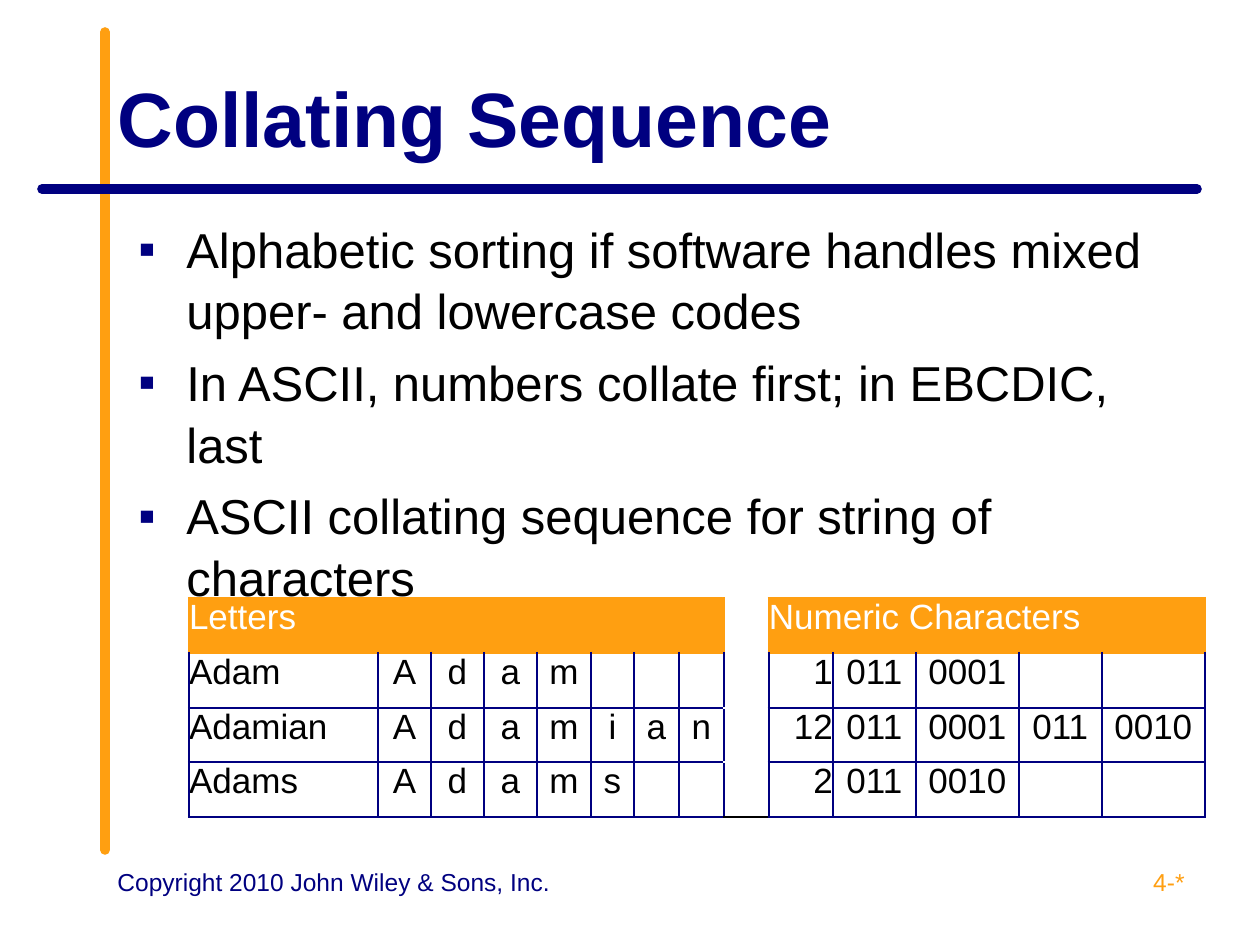
"""Build the Collating Sequence slide."""
from lxml import etree
from pptx import Presentation, util as u
from pptx.dml.color import RGBColor
from pptx.enum import shapes, text
from pptx.oxml import ns

SCALE = 914400 / 126
FONT = "Arial"
NAVY, ORANGE, WHITE, BLACK = "000080", "FF9F11", "FFFFFF", "000000"
LEFT, CENTER, RIGHT = text.PP_ALIGN.LEFT, text.PP_ALIGN.CENTER, text.PP_ALIGN.RIGHT

RULES = [((105, 850), (105, 32), ORANGE), ((1197, 189), (42, 189), NAVY)]
TITLE = "Collating Sequence"
BULLETS = [
    "Alphabetic sorting if software handles mixed upper- and lowercase codes",
    "In ASCII, numbers collate first; in EBCDIC, last",
    "ASCII collating sequence for string of characters",
]
FOOTERS = [
    ("4-*", (903, 861, 294, 65), ORANGE, RIGHT),
    ("Copyright 2010 John Wiley & Sons, Inc.", (105, 861, 462, 65), NAVY, LEFT),
]
HEADINGS = {0: ("Letters", 7), 9: ("Numeric Characters", 13)}
GAP, NUMBER = 8, 9
ROWS = [
    ("Adam", ["1", "011", "0001"]),
    ("Adamian", ["12", "011", "0001", "011", "0010"]),
    ("Adams", ["2", "011", "0010"]),
]
COLUMN_WIDTHS = [189, 53, 53, 53, 54, 43, 45, 45, 45, 64, 83, 103, 83, 103]
ROW_HEIGHTS = [55, 55, 54, 55]


def px(value):
    return u.Emu(round(value * SCALE))


def color(value):
    return RGBColor.from_string(value)


def write(para, words, size, ink, align=LEFT, bold=False):
    para.alignment = align
    span = para.add_run()
    span.text = words
    font = span.font
    font.name, font.size, font.bold = FONT, u.Pt(size), bold
    font.color.rgb = color(ink)


def add_box(page, place):
    frame = page.shapes.add_textbox(*map(px, place)).text_frame
    frame.word_wrap = True
    return frame


def add_rule(page, start, end, ink):
    rule = page.shapes.add_connector(shapes.MSO_CONNECTOR.STRAIGHT, *map(px, start + end))
    rule.line.width = u.Pt(5.5)
    rule.line.color.rgb = color(ink)
    rule.line._get_or_add_ln().set("cap", "rnd")
    etree.SubElement(rule._element.spPr, ns.qn("a:effectLst"))


def add_bullet(para):
    props = para._p.get_or_add_pPr()
    props.set("marL", str(px(48)))
    props.set("indent", str(-px(48)))
    tint = etree.SubElement(props, ns.qn("a:buClr"))
    etree.SubElement(tint, ns.qn("a:srgbClr"), val=NAVY)
    etree.SubElement(props, ns.qn("a:buFont"), typeface=FONT)
    etree.SubElement(props, ns.qn("a:buChar"), char="▪")


def border(cell, **sides):
    """Draw the given L, R, T, B sides, each an (ink, points) pair."""
    props = cell._tc.get_or_add_tcPr()
    for side in "LRTB":
        if side in sides:
            ink, points = sides[side]
            line = etree.SubElement(props, ns.qn(f"a:ln{side}"), w=str(u.Pt(points)))
            fill = etree.SubElement(line, ns.qn("a:solidFill"))
            etree.SubElement(fill, ns.qn("a:srgbClr"), val=ink)


def cell_borders(row, column):
    edge = (ORANGE if row == 0 else NAVY, 1.5)
    sides = dict.fromkeys("LRTB", edge)
    if row == 1:
        sides["T"] = (ORANGE, 1.5)
    if column == GAP:
        sides = {"L": edge, "R": edge}
        if row == 0:
            sides.update(T=(WHITE, 1), B=(WHITE, 1))
        elif row == 1:
            sides["T"] = (WHITE, 1)
        elif row == len(ROWS):
            sides["B"] = (BLACK, 1)
    return sides


def add_table(page):
    size = sum(COLUMN_WIDTHS), sum(ROW_HEIGHTS)
    table = page.shapes.add_table(len(ROW_HEIGHTS), len(COLUMN_WIDTHS),
                                  *map(px, (189, 598) + size)).table
    table.first_row = table.horz_banding = False
    for column, width in zip(table.columns, COLUMN_WIDTHS):
        column.width = px(width)
    for row, height in zip(table.rows, ROW_HEIGHTS):
        row.height = px(height)
    for r, row in enumerate(table.rows):
        for c, cell in enumerate(row.cells):
            cell.margin_left = cell.margin_right = cell.margin_top = cell.margin_bottom = 0
            border(cell, **cell_borders(r, c))
            if r == 0 and c != GAP:
                cell.fill.solid()
                cell.fill.fore_color.rgb = color(ORANGE)
            else:
                cell.fill.background()
    for first, (heading, last) in HEADINGS.items():
        table.cell(0, first).merge(table.cell(0, last))
        write(table.cell(0, first).text_frame.paragraphs[0], heading, 20, WHITE)
    for r, (name, codes) in enumerate(ROWS, 1):
        entries = dict(enumerate([name, *name])) | dict(enumerate(codes, NUMBER))
        for c, words in entries.items():
            align = {0: LEFT, NUMBER: RIGHT}.get(c, CENTER)
            write(table.cell(r, c).text_frame.paragraphs[0], words, 20, BLACK, align)


def main():
    deck = Presentation()
    deck.slide_width, deck.slide_height = px(1260), px(945)
    page = deck.slides.add_slide(deck.slide_layouts[6])
    for rule in RULES:
        add_rule(page, *rule)
    title = add_box(page, (105, 38, 1092, 157))
    title.vertical_anchor = text.MSO_ANCHOR.MIDDLE
    write(title.paragraphs[0], TITLE, 44, NAVY, bold=True)
    body = add_box(page, (126, 210, 1081, 624))
    for i, words in enumerate(BULLETS):
        para = body.add_paragraph() if i else body.paragraphs[0]
        add_bullet(para)
        para.line_spacing = 1.05
        if i:
            para.space_before = u.Pt(5.6)
        write(para, words, 28, BLACK)
    add_table(page)
    for words, place, ink, align in FOOTERS:
        write(add_box(page, place).paragraphs[0], words, 14, ink, align)
    deck.save("out.pptx")


if __name__ == "__main__":
    main()
